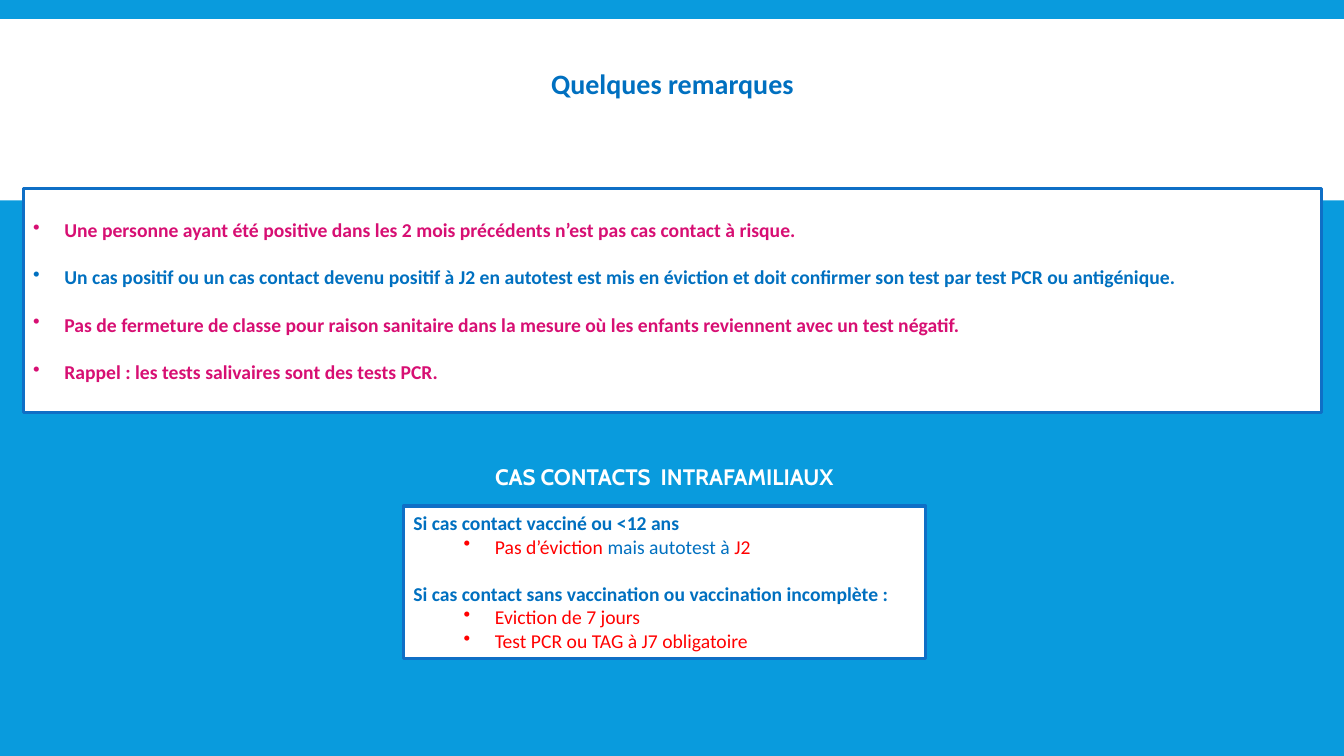
from lxml import etree
from pptx import Presentation
from pptx.dml.color import RGBColor
from pptx.enum.shapes import MSO_SHAPE
from pptx.enum.text import MSO_ANCHOR, MSO_AUTO_SIZE, PP_ALIGN
from pptx.oxml.ns import qn
from pptx.util import Inches, Pt

RECT = MSO_SHAPE.RECTANGLE
TOP, MIDDLE = MSO_ANCHOR.TOP, MSO_ANCHOR.MIDDLE
LEFT, CENTER = PP_ALIGN.LEFT, PP_ALIGN.CENTER
FIXED = MSO_AUTO_SIZE.NONE

SKY, WHITE, EDGE = "099BDD", "FFFFFF", "0F6FC6"
BLUE, PINK, RED = "0070C0", "D70F73", "FF0000"
BODY = {"name": "Calibri", "size": Pt(14)}
BOLD = {**BODY, "bold": True}
TITLE = {**BOLD, "size": Pt(20)}
HEAD = {"name": "Cabin", "size": Pt(16), "bold": True}
GAP = Pt(17)
HANG = 0.31


def color(code):
    return RGBColor.from_string(code)


def assign(item, values):
    for name, value in values.items():
        setattr(item, name, value)


class Deck:
    def __init__(self):
        self.show = Presentation()
        assign(self.show, {"slide_width": Inches(13.33), "slide_height": Inches(7.5)})
        self.slide = self.show.slides.add_slide(self.show.slide_layouts[5])
        fill = self.slide.background.fill
        fill.solid()
        fill.fore_color.rgb = color(SKY)

    def place(self, left, top, width, height):
        across, down = self.show.slide_width / 100, self.show.slide_height / 100
        return [round(left * across), round(top * down),
                round(width * across), round(height * down)]

    def box(self, area, edge=None):
        shape = self.slide.shapes.add_shape(RECT, *self.place(*area))
        shape.shadow.inherit = False
        shape.fill.solid()
        shape.fill.fore_color.rgb = color(WHITE)
        if edge:
            shape.line.color.rgb = color(edge)
            shape.line.width = Pt(2.25)
        else:
            shape.line.fill.background()
        return shape

    def frame(self, shape, anchor):
        assign(shape.text_frame, {"word_wrap": True, "auto_size": FIXED,
                                  "vertical_anchor": anchor})
        return shape.text_frame

    def fill_para(self, para, runs, font, form):
        assign(para, form)
        for text, code in runs:
            run = para.add_run()
            run.text = text
            assign(run.font, font)
            run.font.color.rgb = color(code)

    def label(self, shape, text, font, code):
        para = self.frame(shape, MIDDLE).paragraphs[0]
        self.fill_para(para, [(text, code)], font,
                       {"alignment": CENTER, "line_spacing": 0.85})

    def title(self, area, text):
        shape = self.slide.shapes.title
        names = ("left", "top", "width", "height")
        assign(shape, dict(zip(names, self.place(*area))))
        self.label(shape, text, TITLE, BLUE)

    def text(self, area, text):
        shape = self.slide.shapes.add_textbox(*self.place(*area))
        self.label(shape, text, HEAD, WHITE)

    def bullet(self, para, indent):
        props = para._p.get_or_add_pPr()
        props.set("marL", str(Inches(indent)))
        props.set("indent", str(-Inches(HANG)))
        etree.SubElement(props, qn("a:buChar")).set("char", "•")

    def panel(self, area, rows, inset=0.05):
        frame = self.frame(self.box(area, EDGE), TOP)
        frame.margin_top = Inches(inset)
        for index, (runs, font, indent, before) in enumerate(rows):
            para = frame.add_paragraph() if index else frame.paragraphs[0]
            self.fill_para(para, runs, font, {"alignment": LEFT, "space_before": before})
            if indent:
                self.bullet(para, indent)


def main():
    deck = Deck()
    band = deck.box((0, 2.53, 100, 24))
    tree = deck.slide.shapes.title.element.getparent()
    tree.insert(2, band.element)
    deck.title((9.9, 8, 80.27, 6.67), "Quelques remarques")

    notes = [
        ("Une personne ayant été positive dans les 2 mois précédents n’est pas "
         "cas contact à risque.", PINK),
        ("Un cas positif ou un cas contact devenu positif à J2 en autotest est mis "
         "en éviction et doit confirmer son test par test PCR ou antigénique.", BLUE),
        ("Pas de fermeture de classe pour raison sanitaire dans la mesure où les "
         "enfants reviennent avec un test négatif.", PINK),
        ("Rappel : les tests salivaires sont des tests PCR.", PINK),
    ]
    deck.panel((1.73, 24.93, 96.62, 29.6),
               [([note], BOLD, HANG, GAP if index else Pt(0))
                for index, note in enumerate(notes)], 0.29)

    deck.text((31.28, 59.87, 36.31, 6.93), "CAS CONTACTS  INTRAFAMILIAUX")

    cases = [
        ("Si cas contact vacciné ou <12 ans", Pt(0),
         [[("Pas d’éviction ", RED), ("mais autotest à ", BLUE), ("J2", RED)]]),
        ("Si cas contact sans vaccination ou vaccination incomplète :", GAP,
         [[("Eviction de 7 jours", RED)], [("Test PCR ou TAG à J7 obligatoire", RED)]]),
    ]
    rows = []
    for case, before, rules in cases:
        rows.append(([(case, BLUE)], BOLD, 0, before))
        rows += [(rule, BODY, 0.5 + HANG, Pt(0)) for rule in rules]
    deck.panel((30.01, 66.93, 38.86, 20.13), rows)

    deck.show.save("out.pptx")


if __name__ == "__main__":
    main()
